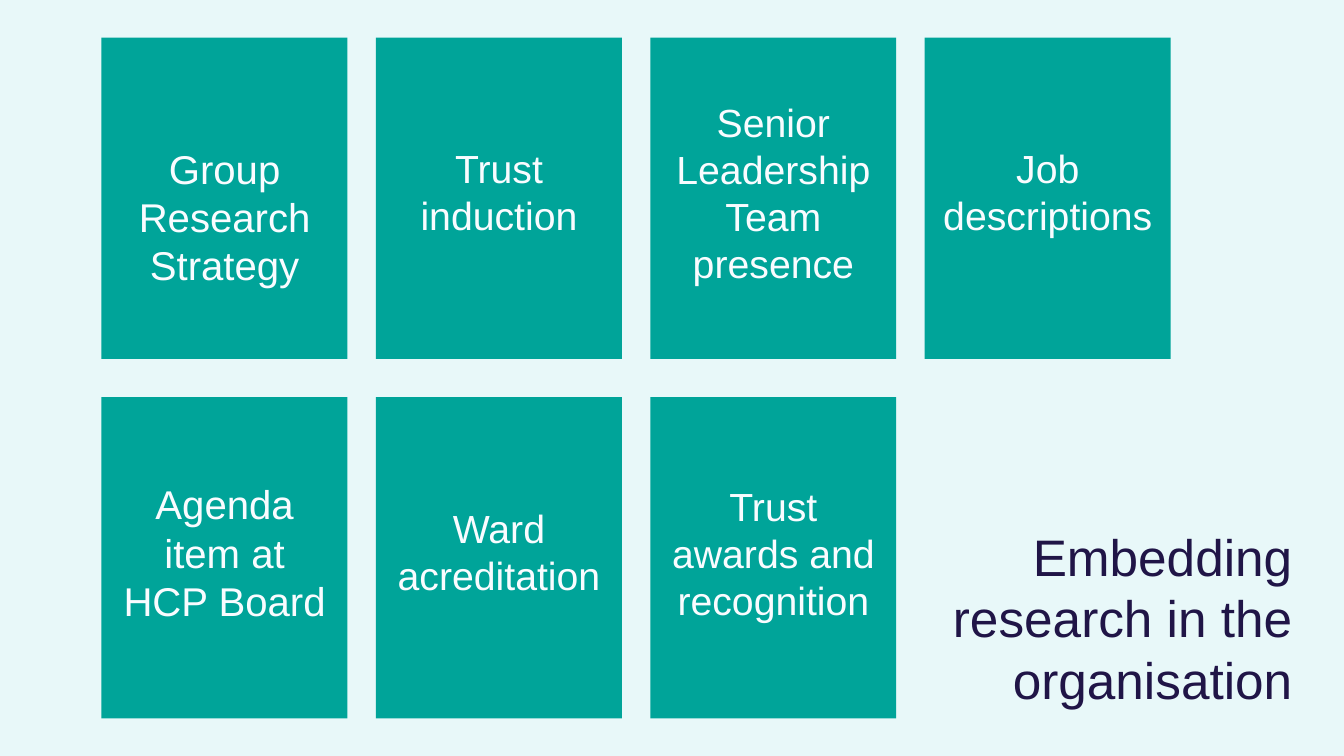
import pptx
import pptx.dml.color
import pptx.enum.shapes
import pptx.enum.text
import pptx.util

Pt = pptx.util.Pt
ALIGN = pptx.enum.text.PP_ALIGN

BACKGROUND = "E8F8F9"
TEAL = "00A499"
NAVY = "201547"
OFF_WHITE = "F9FCFF"

# Card grid, in points
GRID_LEFT, GRID_TOP = 108.72, 40.32
COLUMN_STEP, ROW_STEP = 294, 385.2
CARD_WIDTH, CARD_HEIGHT = 263.5, 344.2
LABEL_INSET, LABEL_WIDTH = 18.5, 226.8

# Each row: label, text size, label offset from card top, label height
CARD_ROWS = [
    [
        ("Group Research Strategy", 43, 114.5, 159.8),
        ("Trust induction", 42, 114.5, 107.3),
        ("Senior Leadership Team presence", 42, 64.8, 208.1),
        ("Job descriptions", 42, 114.5, 107.3),
    ],
    [
        ("Agenda item at HCP Board", 43, 88.6, 159.8),
        ("Ward acreditation", 42, 115.2, 107.3),
        ("Trust awards and recognition", 42, 90.7, 157.7),
    ],
]


def rgb(value):
    return pptx.dml.color.RGBColor.from_string(value)


def write_text(box, text, *, size, color, align):
    """Fill a box with one paragraph at 1.2 line spacing and no margins."""
    frame = box.text_frame
    frame.word_wrap = True
    frame.auto_size = pptx.enum.text.MSO_AUTO_SIZE.SHAPE_TO_FIT_TEXT
    frame.vertical_anchor = pptx.enum.text.MSO_ANCHOR.TOP
    frame.margin_left = frame.margin_right = Pt(0)
    frame.margin_top = frame.margin_bottom = Pt(0)
    para = frame.paragraphs[0]
    para.alignment = align
    para.line_spacing = Pt(size * 1.2)
    para.space_before = Pt(0)
    span = para.add_run()
    span.text = text
    span.font.name = "Arial"
    span.font.size = Pt(size)
    span.font.color.rgb = rgb(color)


def add_title(page, left, top, width, height):
    title = page.shapes.title
    title.left, title.top = Pt(left), Pt(top)
    title.width, title.height = Pt(width), Pt(height)
    write_text(title, "Embedding research in the organisation",
               size=55, color=NAVY, align=ALIGN.RIGHT)


def add_card(page, left, top, label, size, label_offset, label_height):
    # Panel
    panel = page.shapes.add_shape(
        pptx.enum.shapes.MSO_SHAPE.RECTANGLE,
        Pt(left), Pt(top), Pt(CARD_WIDTH), Pt(CARD_HEIGHT))
    panel.shadow.inherit = False
    panel.fill.solid()
    panel.fill.fore_color.rgb = rgb(TEAL)
    panel.line.fill.background()

    # Label
    box = page.shapes.add_textbox(
        Pt(left + LABEL_INSET), Pt(top + label_offset),
        Pt(LABEL_WIDTH), Pt(label_height))
    write_text(box, label, size=size, color=OFF_WHITE, align=ALIGN.CENTER)


def add_card_grid(page, left, top):
    for row, cards in enumerate(CARD_ROWS):
        for column, card in enumerate(cards):
            add_card(page, left + column * COLUMN_STEP,
                     top + row * ROW_STEP, *card)


def main():
    deck = pptx.Presentation()
    deck.slide_width, deck.slide_height = Pt(1440), Pt(810)
    page = deck.slides.add_slide(deck.slide_layouts.get_by_name("Title Only"))
    page.background.fill.solid()
    page.background.fill.fore_color.rgb = rgb(BACKGROUND)

    add_title(page, 1008.72, 562.32, 375.84, 207.36)
    add_card_grid(page, GRID_LEFT, GRID_TOP)
    deck.save("out.pptx")


if __name__ == "__main__":
    main()
